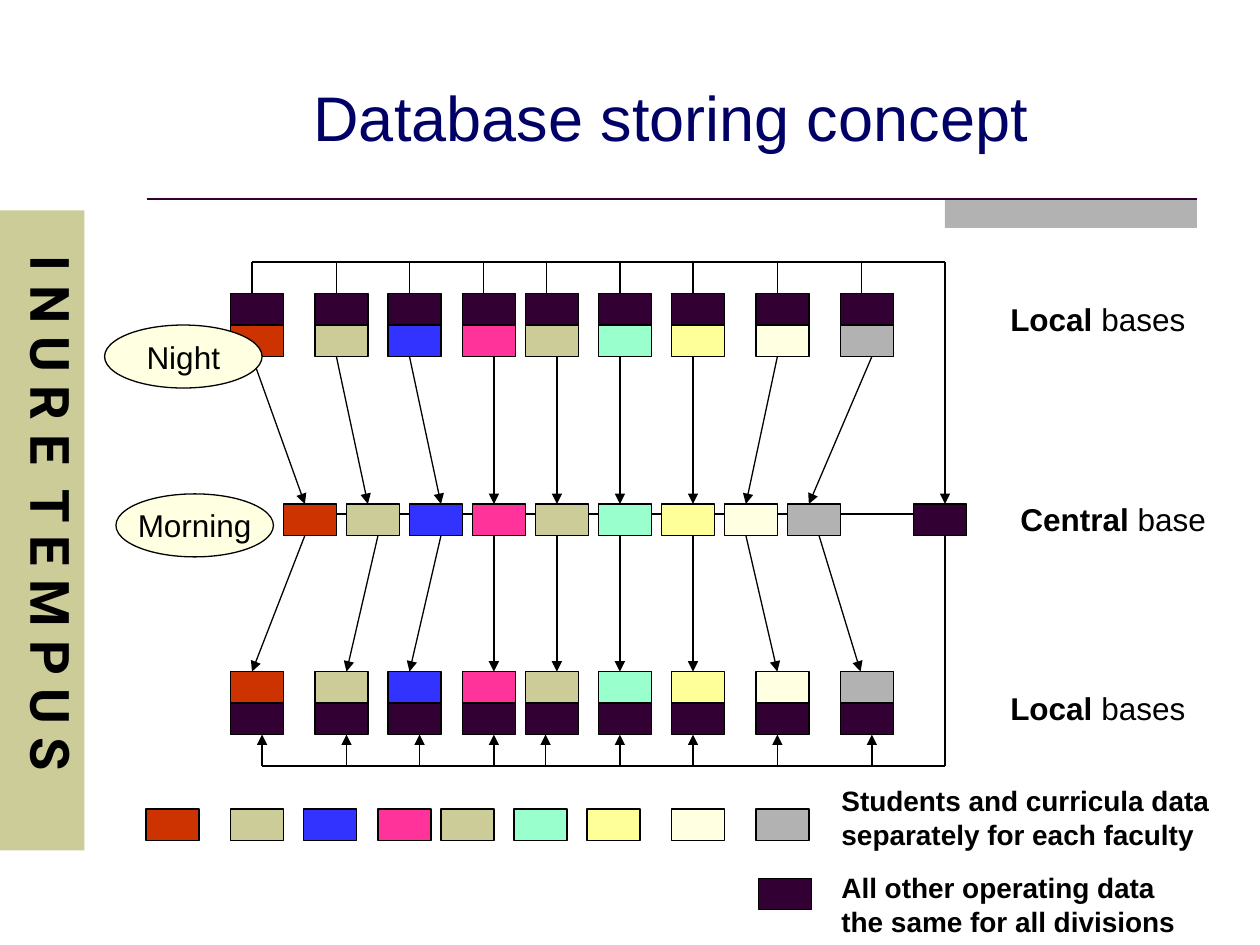
from dataclasses import dataclass
from itertools import pairwise

from lxml.etree import SubElement
from pptx import Presentation
from pptx.dml.color import RGBColor
from pptx.enum.shapes import MSO_CONNECTOR, MSO_SHAPE
from pptx.enum.text import MSO_ANCHOR, PP_ALIGN
from pptx.oxml.ns import qn
from pptx.util import Inches, Pt


@dataclass(frozen=True)
class Theme:
    font: str = "Arial"
    banner_font: str = "Roboto"
    ink: str = "000000"
    title: str = "000066"
    shared: str = "330033"
    khaki: str = "CCCC99"
    gray: str = "B2B2B2"
    cream: str = "FFFFE1"
    title_size: int = 36
    banner_size: int = 31
    label_size: int = 18
    legend_size: int = 16
    line: float = 0.75
    rule: float = 1.5


@dataclass(frozen=True)
class Faculty:
    color: str
    left: float
    night: tuple
    morning: tuple
    sync: float


T = Theme()
BOX_W, BOX_H = 0.42, 0.25
NIGHT_Y, CENTRAL_Y, MORNING_Y, LEGEND_Y = 2.33, 4, 5.33, 6.42
TOP_BUS, LINK_Y, BOTTOM_BUS, BUS_X = 2.08, 4.08, 6.08, 7.5
CENTRAL_X, CENTRAL_STEP, SHARED_X = 2.25, 0.5, 7.25
TAP, LEGEND_SHIFT = 0.17, 0.67

FACULTIES = [
    Faculty("CC3300", 1.83, (2, 2.42), (2.42, 2), 2.08),
    Faculty(T.khaki, 2.5, (2.67, 2.92), (3, 2.75), 2.75),
    Faculty("3333FF", 3.08, (3.25, 3.5), (3.5, 3.25), 3.33),
    Faculty("FF3399", 3.67, (3.92, 3.92), (3.92, 3.92), 3.92),
    Faculty(T.khaki, 4.17, (4.42, 4.42), (4.42, 4.42), 4.33),
    Faculty("99FFCC", 4.75, (4.92, 4.92), (4.92, 4.92), 4.92),
    Faculty("FFFF99", 5.33, (5.5, 5.5), (5.5, 5.5), 5.5),
    Faculty(T.cream, 6, (6.17, 5.92), (5.92, 6.17), 6.17),
    Faculty(T.gray, 6.67, (6.92, 6.42), (6.5, 6.83), 6.92),
]


def rgb(value):
    return RGBColor.from_string(value)


def add_shape(s, kind, x, y, w, h, fill, outlined=True):
    sp = s.shapes.add_shape(kind, Inches(x), Inches(y), Inches(w), Inches(h))
    sp.shadow.inherit = False
    sp.fill.solid()
    sp.fill.fore_color.rgb = rgb(fill)
    if outlined:
        sp.line.color.rgb = rgb(T.ink)
        sp.line.width = Pt(T.line)
    else:
        sp.line.fill.background()
    return sp


def add_box(s, x, y, fill):
    add_shape(s, MSO_SHAPE.RECTANGLE, x, y, BOX_W, BOX_H, fill)


def add_line(s, x1, y1, x2, y2, arrow=False, color=T.ink, width=T.line):
    cn = s.shapes.add_connector(
        MSO_CONNECTOR.STRAIGHT, Inches(x1), Inches(y1), Inches(x2), Inches(y2))
    cn.line.color.rgb = rgb(color)
    cn.line.width = Pt(width)
    if arrow:
        SubElement(cn.line._get_or_add_ln(), qn("a:tailEnd"), type="triangle")
    SubElement(cn._element.spPr, qn("a:effectLst"))


def style(p, size, color=T.ink, font=T.font, bold=None):
    p.font.name = font
    p.font.size = Pt(size)
    p.font.color.rgb = rgb(color)
    p.font.bold = bold


def add_text(s, x, y, w, h, lines, size, wrap=False, **look):
    tb = s.shapes.add_textbox(Inches(x), Inches(y), Inches(w), Inches(h))
    tf = tb.text_frame
    tf.word_wrap = wrap
    for i, line in enumerate(lines):
        p = tf.paragraphs[0] if i == 0 else tf.add_paragraph()
        p.text = line
        style(p, size, **look)
    return tf


def add_label(s, x, y, w, strong, rest):
    tf = add_text(s, x, y, w, 0.4, [strong], T.label_size)
    p = tf.paragraphs[0]
    p.runs[0].font.bold = True
    p.add_run().text = rest


def add_oval(s, x, y, text):
    tf = add_shape(s, MSO_SHAPE.OVAL, x, y, 1.25, 0.5, T.cream).text_frame
    tf.word_wrap = False
    tf.vertical_anchor = MSO_ANCHOR.MIDDLE
    p = tf.paragraphs[0]
    p.text = text
    p.alignment = PP_ALIGN.CENTER
    style(p, T.label_size)


def add_frame(s):
    add_shape(s, MSO_SHAPE.RECTANGLE, 0, 1.67, 0.67, 5.08, T.khaki, False)
    add_shape(s, MSO_SHAPE.RECTANGLE, 7.5, 1.58, 2, 0.23, T.gray, False)
    add_line(s, 1.17, 1.58, 9.5, 1.58, color=T.shared, width=T.rule)
    banner = add_text(s, 0, 1.83, 0.72, 4.75, ["I N U R E  T E M P U S"],
                      T.banner_size, wrap=True, font=T.banner_font, bold=True)
    banner.margin_top = Inches(0.2)
    banner._txBody.bodyPr.set("vert", "eaVert")
    title = add_text(s, 2.39, 0.3, 7.1, 1.25, ["Database storing concept"],
                     T.title_size, wrap=True, color=T.title)
    title.vertical_anchor = MSO_ANCHOR.MIDDLE


def add_faculty(s, i, f):
    for y, fill in ((NIGHT_Y, T.shared), (NIGHT_Y + BOX_H, f.color),
                    (MORNING_Y, f.color), (MORNING_Y + BOX_H, T.shared)):
        add_box(s, f.left, y, fill)
    add_box(s, CENTRAL_X + i * CENTRAL_STEP, CENTRAL_Y, f.color)
    add_box(s, f.left - LEGEND_SHIFT, LEGEND_Y, f.color)
    add_line(s, f.left + TAP, TOP_BUS, f.left + TAP, NIGHT_Y)
    start, end = f.night
    add_line(s, start, NIGHT_Y + 2 * BOX_H, end, CENTRAL_Y, arrow=True)
    start, end = f.morning
    add_line(s, start, CENTRAL_Y + BOX_H, end, MORNING_Y, arrow=True)
    add_line(s, f.sync, BOTTOM_BUS, f.sync, MORNING_Y + 2 * BOX_H, arrow=True)


def add_buses(s):
    add_box(s, SHARED_X, CENTRAL_Y, T.shared)
    add_line(s, FACULTIES[0].left + TAP, TOP_BUS, BUS_X, TOP_BUS)
    add_line(s, BUS_X, TOP_BUS, BUS_X, CENTRAL_Y, arrow=True)
    add_line(s, BUS_X, CENTRAL_Y + BOX_H, BUS_X, BOTTOM_BUS)
    add_line(s, BUS_X, BOTTOM_BUS, FACULTIES[0].sync, BOTTOM_BUS)
    central = [CENTRAL_X + i * CENTRAL_STEP for i in range(len(FACULTIES))]
    for x, following in pairwise(central + [SHARED_X]):
        add_line(s, x + BOX_W, LINK_Y, following, LINK_Y)


def main():
    prs = Presentation()
    prs.slide_width, prs.slide_height = Inches(10), Inches(7.5)
    s = prs.slides.add_slide(prs.slide_layouts[6])
    add_frame(s)
    for i, f in enumerate(FACULTIES):
        add_faculty(s, i, f)
    add_buses(s)
    add_oval(s, 0.83, 2.58, "Night")
    add_oval(s, 0.92, 3.92, "Morning")
    add_label(s, 7.92, 2.33, 1.84, "Local", " bases")
    add_label(s, 8, 3.92, 1.74, "Central", " base")
    add_label(s, 7.92, 5.42, 1.84, "Local", " bases")
    add_text(s, 6.58, 6.17, 3.19, 0.64,
             ["Students and curricula data", "separately for each faculty"],
             T.legend_size, bold=True)
    add_box(s, 6.02, 6.97, T.shared)
    add_text(s, 6.58, 6.86, 2.86, 0.64,
             ["All other operating data", "the same for all divisions"],
             T.legend_size, bold=True)
    prs.save("out.pptx")


if __name__ == "__main__":
    main()
